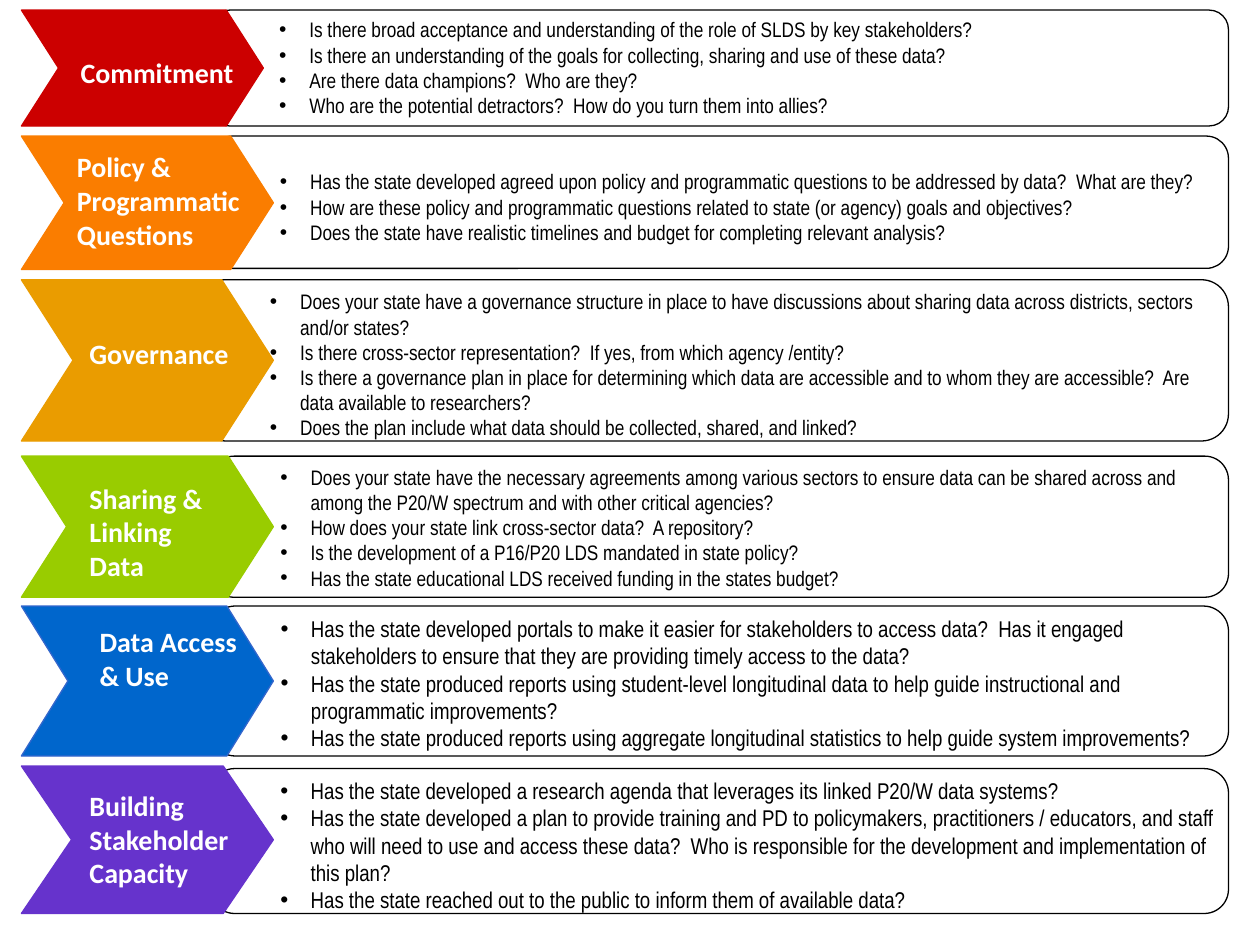
"""Builds a slide of six state data system themes, each with its guiding questions."""
from lxml.etree import SubElement
from pptx import Presentation
from pptx.dml.color import RGBColor
from pptx.enum.shapes import MSO_SHAPE
from pptx.enum.text import MSO_ANCHOR, PP_ALIGN
from pptx.oxml.ns import qn
from pptx.util import Inches, Pt

BLACK = RGBColor(0x00, 0x00, 0x00)
WHITE = RGBColor(0xFF, 0xFF, 0xFF)
RED = RGBColor(0xCC, 0x00, 0x00)
ORANGE = RGBColor(0xFA, 0x7D, 0x00)
AMBER = RGBColor(0xEA, 0x9C, 0x00)
GREEN = RGBColor(0x99, 0xCC, 0x00)
BLUE = RGBColor(0x00, 0x66, 0xCC)
LIGHT_BLUE = RGBColor(0x33, 0x66, 0xCC)
PURPLE = RGBColor(0x66, 0x33, 0xCC)

ARROW_LEFT = 0.17
PANEL_RIGHT = 9.75
INDENT = Inches(0.24)

themes = [
    {"name": "Commitment", "label": (0.6, 0.4, 1.4, 0.35),
     "panel": (1.67, 0.08, 0.92), "arrow": (0.08, 1.92, 0.92),
     "notch": 0.32, "fill": RED, "edge": RED, "size": 12, "inset": 0.01,
     "questions": [
         "Is there broad acceptance and understanding of the role of SLDS by key stakeholders?",
         "Is there an understanding of the goals for collecting, sharing and use of these data?",
         "Are there data champions?  Who are they?",
         "Who are the potential detractors?  How do you turn them into allies?"]},
    {"name": "Policy & Programmatic Questions", "label": (0.57, 1.15, 1.52, 0.9),
     "panel": (1.67, 1.08, 1.05), "arrow": (1.08, 2, 1.06),
     "notch": 0.32, "fill": ORANGE, "edge": ORANGE, "size": 12, "inset": 0.21,
     "questions": [
         "Has the state developed agreed upon policy and programmatic questions to be addressed "
         "by data?  What are they?",
         "How are these policy and programmatic questions related to state (or agency) goals and "
         "objectives?",
         "Does the state have realistic timelines and budget for completing relevant analysis?"]},
    {"name": "Governance", "label": (0.67, 2.63, 1.34, 0.49),
     "panel": (1.58, 2.22, 1.28), "arrow": (2.22, 2, 1.28),
     "notch": 0.32, "fill": AMBER, "edge": AMBER, "size": 12, "inset": 0.01,
     "questions": [
         "Does your state have a governance structure in place to have discussions about sharing "
         "data across districts, sectors and/or states?",
         "Is there cross-sector representation?  If yes, from which agency /entity?",
         "Is there a governance plan in place for determining which data are accessible and to "
         "whom they are accessible?  Are data available to researchers?",
         "Does the plan include what data should be collected, shared, and linked?"]},
    {"name": "Sharing & Linking Data", "label": (0.67, 3.78, 1.15, 0.79),
     "panel": (1.67, 3.62, 1.12), "arrow": (3.62, 2, 1.12),
     "notch": 0.32, "fill": GREEN, "edge": GREEN, "size": 12, "inset": 0.01,
     "questions": [
         "Does your state have the necessary agreements among various sectors to ensure data can "
         "be shared across and among the P20/W spectrum and with other critical agencies?",
         "How does your state link cross-sector data?  A repository?",
         "Is the development of a P16/P20 LDS mandated in state policy?",
         "Has the state educational LDS received funding in the states budget?"]},
    {"name": "Data Access & Use", "label": (0.75, 4.92, 1.17, 0.82),
     "panel": (1.67, 4.81, 1.19), "arrow": (4.81, 2, 1.19),
     "notch": 0.31, "fill": BLUE, "edge": LIGHT_BLUE, "size": 13, "inset": 0.01,
     "questions": [
         "Has the state developed portals to make it easier for stakeholders to access data?  Has "
         "it engaged stakeholders to ensure that they are providing timely access to the data?",
         "Has the state produced reports using student-level longitudinal data to help guide "
         "instructional and programmatic improvements?",
         "Has the state produced reports using aggregate longitudinal statistics to help guide "
         "system improvements?"]},
    {"name": "Building Stakeholder Capacity", "label": (0.67, 6.22, 1.39, 0.86),
     "panel": (1.67, 6.1, 1.15), "arrow": (6.08, 2, 1.17),
     "notch": 0.34, "fill": PURPLE, "edge": PURPLE, "size": 13, "inset": 0.01,
     "questions": [
         "Has the state developed a research agenda that leverages its linked P20/W data systems?",
         "Has the state developed a plan to provide training and PD to policymakers, "
         "practitioners / educators, and staff who will need to use and access these data?  Who is "
         "responsible for the development and implementation of this plan?",
         "Has the state reached out to the public to inform them of available data?"]},
]


def add_outlined(kind, box, adjustment, edge):
    outlined = slide.shapes.add_shape(kind, *map(Inches, box))
    outlined.adjustments[0] = adjustment
    outlined.shadow.inherit = False
    outlined.line.color.rgb = edge
    outlined.line.width = Pt(0.75)
    return outlined


def fill_text(frame, lines, insets, font_name, size, color, bold, bulleted):
    frame.word_wrap = True
    frame.vertical_anchor = MSO_ANCHOR.TOP
    frame.margin_left, frame.margin_top, frame.margin_right, frame.margin_bottom = map(Inches, insets)
    frame.text = "\n".join(lines)
    for paragraph in frame.paragraphs:
        paragraph.alignment = PP_ALIGN.LEFT
        if bulleted:
            properties = paragraph._p.get_or_add_pPr()
            properties.set("marL", str(INDENT))
            properties.set("indent", str(-INDENT))
            SubElement(properties, qn("a:buFont")).set("typeface", "Arial")
            SubElement(properties, qn("a:buChar")).set("char", "•")
        for run in paragraph.runs:
            run.font.name = font_name
            run.font.size = Pt(size)
            run.font.bold = bold
            run.font.color.rgb = color


presentation = Presentation()
presentation.slide_width = Inches(10)
presentation.slide_height = Inches(7.5)
slide = presentation.slides.add_slide(presentation.slide_layouts[6])

for theme in themes:
    left, top, height = theme["panel"]
    panel = add_outlined(MSO_SHAPE.ROUNDED_RECTANGLE, (left, top, PANEL_RIGHT - left, height), 0.167, BLACK)
    panel.fill.background()
    fill_text(panel.text_frame, theme["questions"], (0.5, theme["inset"], 0.01, 0.01),
              "Arial Narrow", theme["size"], BLACK, False, True)

    arrow = add_outlined(MSO_SHAPE.CHEVRON, (ARROW_LEFT, *theme["arrow"]), theme["notch"], theme["edge"])
    arrow.fill.solid()
    arrow.fill.fore_color.rgb = theme["fill"]

    label = slide.shapes.add_textbox(*map(Inches, theme["label"]))
    fill_text(label.text_frame, [theme["name"]], (0.04,) * 4, "Calibri", 16, WHITE, True, False)

presentation.save("out.pptx")
